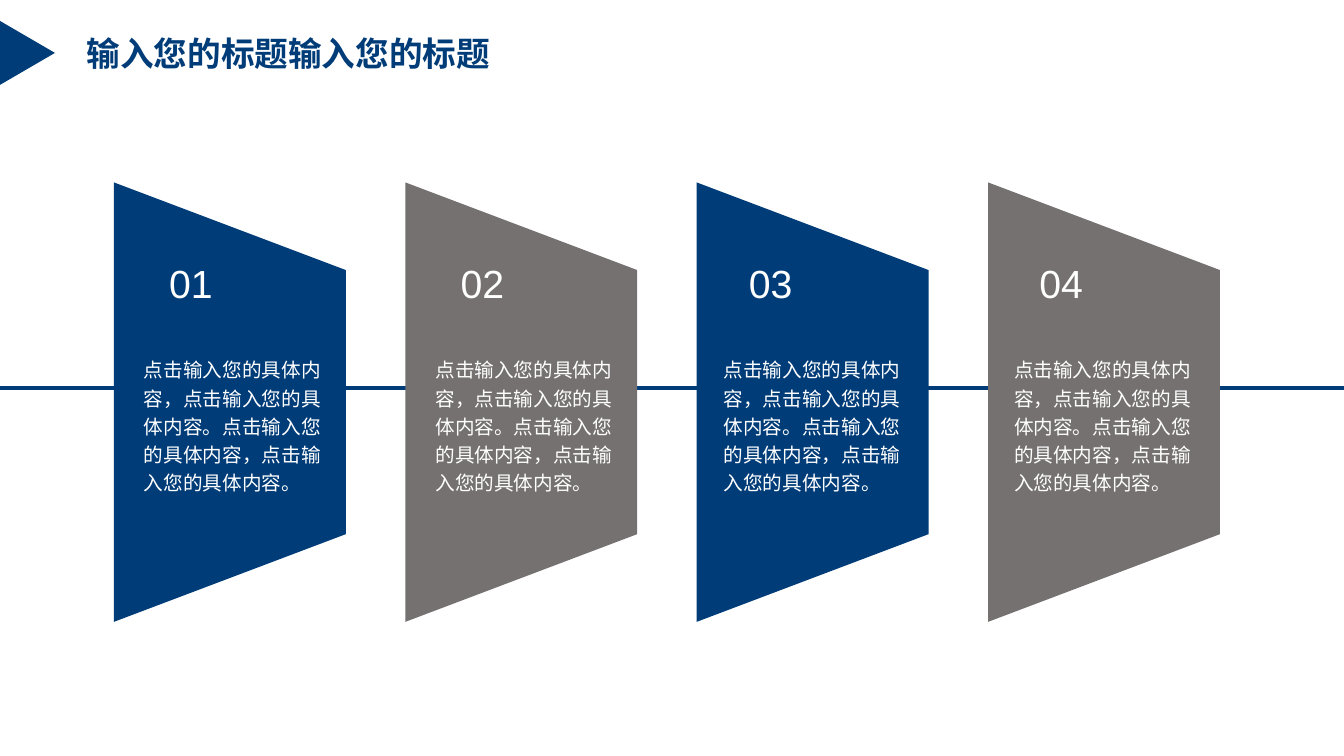
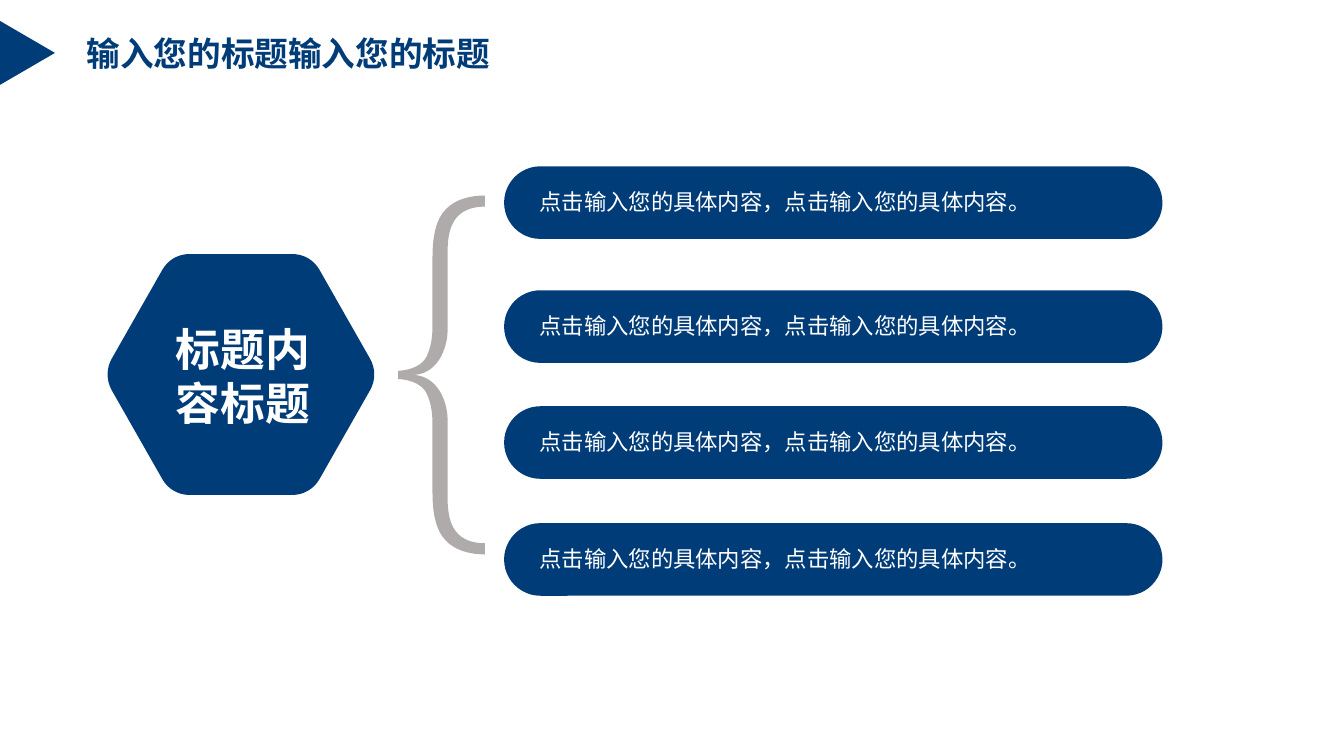
from lxml import etree
from pptx import Presentation
from pptx import util as u
from pptx.dml.color import RGBColor
from pptx.enum import shapes, text
from pptx.oxml.ns import qn

NAVY = "003C78"
GRAY = "767171"
SILVER = "AFABAB"
WHITE = "FFFFFF"
CJK = "Noto Sans CJK JP"
LATIN = "Arial"
PAGE_WIDTH, PAGE_HEIGHT = 13.33, 7.5
TITLE = "输入您的标题输入您的标题"
PHRASE = "点击输入您的具体内容，点击输入您的具体内容。"


def color(value):
    return RGBColor.from_string(value)


def inches(*values):
    return [u.Inches(value) for value in values]


def paint(shape, fill):
    shape.shadow.inherit = False
    shape.fill.solid()
    shape.fill.fore_color.rgb = color(fill)
    shape.line.fill.background()
    return shape


def write(para, words, size, font=CJK, ink=WHITE, bold=False, align=text.PP_ALIGN.LEFT):
    para.text = words
    para.alignment = align
    para.font.size = u.Pt(size)
    para.font.bold = bold
    para.font.name = font
    para.font.color.rgb = color(ink)
    defaults = para._p.pPr.find(qn("a:defRPr"))
    etree.SubElement(defaults, qn("a:ea")).set("typeface", font)


def set_frame(frame, side=0.1, edge=0.05, wrap=True):
    frame.margin_left = frame.margin_right = u.Inches(side)
    frame.margin_top = frame.margin_bottom = u.Inches(edge)
    frame.vertical_anchor = text.MSO_ANCHOR.TOP
    frame.word_wrap = wrap
    frame.auto_size = text.MSO_AUTO_SIZE.SHAPE_TO_FIT_TEXT
    return frame.paragraphs[0]


def add_label(page, left, top, width, height, words, size, **style):
    box = page.shapes.add_textbox(*inches(left, top, width, height))
    write(set_frame(box.text_frame, 0, 0), words, size, **style)


def add_preset(page, kind, left, top, width, height, fill):
    return paint(page.shapes.add_shape(kind, *inches(left, top, width, height)), fill)


def add_outline(page, points, fill, sizes=()):
    corners = [inches(*point) for point in points]
    builder = page.shapes.build_freeform(*corners[0])
    builder.add_line_segments(corners[1:], close=True)
    outline = builder.convert_to_shape()
    strokes = iter(list(outline._element.iter(qn("a:lnTo"))))
    for size in sizes:
        parts = [next(strokes) for _ in range(size)]
        if size == 3:
            curve = etree.Element(qn("a:cubicBezTo"))
            parts[0].addprevious(curve)
            for part in parts:
                curve.append(part[0])
                part.getparent().remove(part)
    return paint(outline, fill)


def blend(start, end, share):
    return tuple(a + (b - a) * share for a, b in zip(start, end))


def add_page(deck):
    page = deck.slides.add_slide(deck.slide_layouts[5])
    title = page.shapes.title
    title.left, title.top, title.width, title.height = inches(0.76, 0.28, 4.24, 0.5)
    write(set_frame(title.text_frame, wrap=False), TITLE, 24, ink=NAVY, bold=True)
    marker = add_preset(page, shapes.MSO_SHAPE.ISOSCELES_TRIANGLE, -0.05, 0.25, 0.64, 0.55, NAVY)
    marker.rotation = 90
    return page


def add_timeline(page, y):
    line = page.shapes.add_connector(shapes.MSO_CONNECTOR.STRAIGHT, *inches(0, y, PAGE_WIDTH, y))
    line.line.color.rgb = color(NAVY)
    line.line.width = u.Pt(3)
    etree.SubElement(line._element.spPr, qn("a:effectLst"))


def add_panel(page, left, text_left, text_width, number, fill):
    panel = page.shapes.add_group_shape()
    top, bottom, slant = 1.81, 6.17, 0.87
    right = left + 2.3
    add_outline(panel, [(left, bottom), (left, top), (right, top + slant), (right, bottom - slant)], fill)
    box = panel.shapes.add_textbox(*inches(text_left, 2.52, text_width, 2.44))
    heading = set_frame(box.text_frame)
    write(heading, f"{number:02}", 28, LATIN)
    heading._p.pPr.set("indent", str(u.Inches(0.25)))
    body = box.text_frame.add_paragraph()
    write(body, PHRASE * 2, 14)
    body.space_before = u.Pt(34)
    body.line_spacing = 1.2


def add_hexagon(page, words):
    left, top, right, bottom = 1.02, 2.52, 3.76, 4.91
    middle, inset, cut, pull = (top + bottom) / 2, 0.68, 0.18, 0.62
    side = right - left - 2 * inset
    corners = [(left, middle), (left + inset, top), (right - inset, top),
               (right, middle), (right - inset, bottom), (left + inset, bottom)]
    points = []
    for index, corner in enumerate(corners):
        start = blend(corner, corners[index - 1], cut / side)
        end = blend(corner, corners[(index + 1) % 6], cut / side)
        points += [start, blend(start, corner, pull), blend(end, corner, pull), end]
    add_outline(page, points[-1:] + points, NAVY, [1, 3] * 6)
    add_label(page, 1.69, 3.19, 1.44, 1.08, words, 32, bold=True, align=text.PP_ALIGN.CENTER)


def add_brace(page):
    middle = 3.72
    lower = [
        (4.09, 3.72), (4.33, 3.72), (4.44, 3.97), (4.44, 4.17),
        (4.44, 4.94), (4.44, 5.08), (4.46, 5.19), (4.52, 5.27),
        (4.58, 5.35), (4.68, 5.39), (4.81, 5.39),
        (4.81, 5.5), (4.64, 5.5), (4.5, 5.45), (4.42, 5.36),
        (4.33, 5.27), (4.29, 5.11), (4.29, 4.88),
        (4.29, 4.2), (4.29, 4.08), (4.27, 3.98), (4.23, 3.9),
        (4.19, 3.82), (4.09, 3.77), (3.95, 3.76),
    ]
    sizes = [3, 1, 3, 3, 1, 3, 3, 1, 3, 3]
    upper = [(x, 2 * middle - y) for x, y in reversed(lower)]
    add_outline(page, lower + upper, SILVER, sizes + [1] + sizes[::-1])


def add_capsule(page, top):
    capsule = add_preset(page, shapes.MSO_SHAPE.ROUNDED_RECTANGLE, 5, top, 6.53, 0.72, NAVY)
    capsule.adjustments[0] = 0.5


def build_steps(deck):
    page = add_page(deck)
    add_timeline(page, 3.85)
    texts = [(1.33, 2.1), (4.22, 2.1), (7.08, 2), (9.96, 2.04)]
    for index, (text_left, text_width) in enumerate(texts):
        add_panel(page, 1.13 + 2.89 * index, text_left, text_width, index + 1, (NAVY, GRAY)[index % 2])


def build_summary(deck):
    page = add_page(deck)
    add_hexagon(page, "标题内容标题")
    add_brace(page)
    tops = (1.65, 2.88, 4.03, 5.19)
    for top in tops:
        add_capsule(page, top)
    for top in tops:
        add_label(page, 5.35, top + 0.22, 5.48, 0.27, PHRASE, 16)


def main():
    deck = Presentation()
    deck.slide_width, deck.slide_height = inches(PAGE_WIDTH, PAGE_HEIGHT)
    build_steps(deck)
    build_summary(deck)
    deck.save("out.pptx")


if __name__ == "__main__":
    main()
